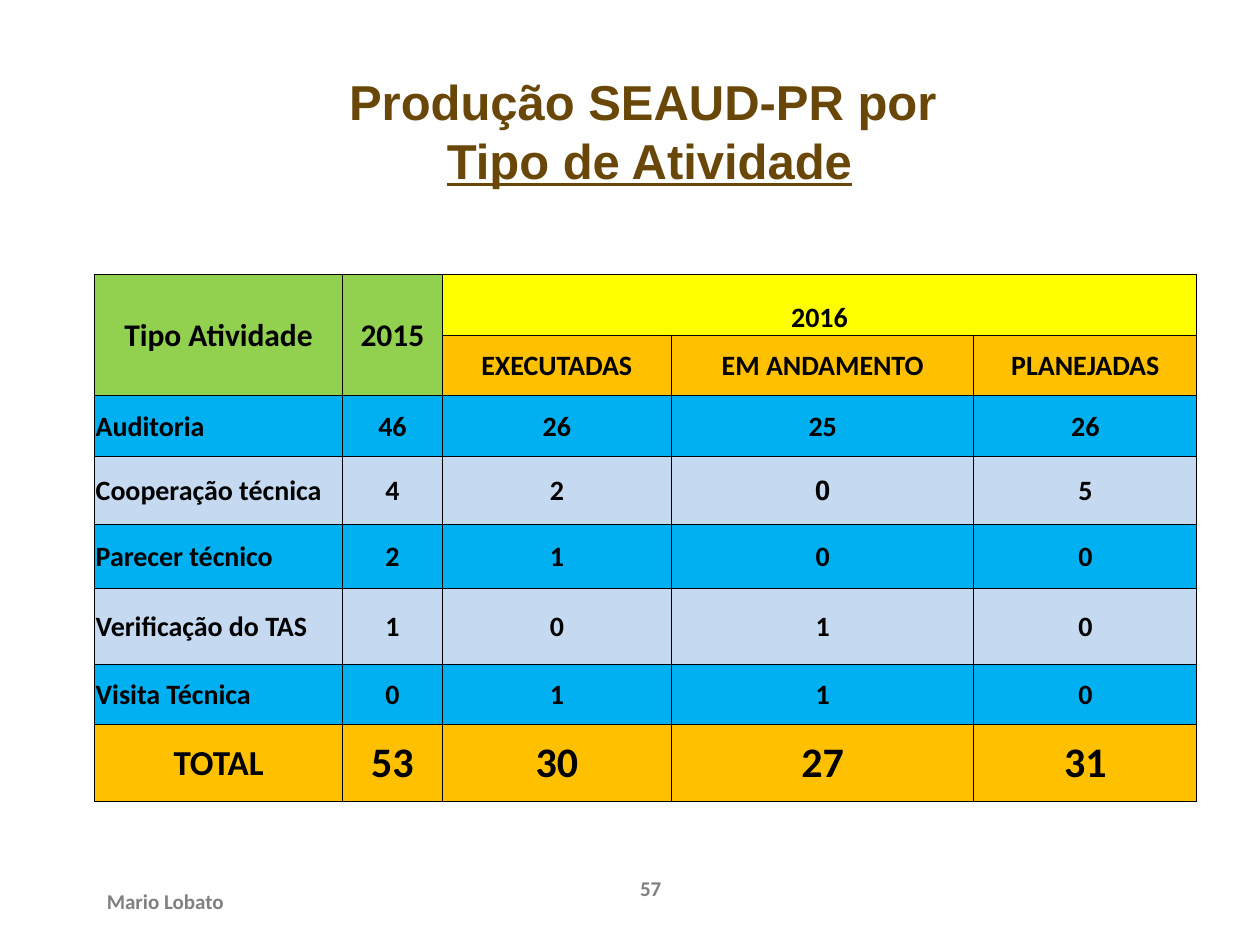
from lxml.etree import SubElement
from pptx import Presentation
from pptx.dml.color import RGBColor
from pptx.enum.text import MSO_ANCHOR as Anchor, PP_ALIGN as Align
from pptx.oxml.ns import qn
from pptx.util import Inches, Pt

COLORS = {"title": "694708", "footer": "808080", "text": "000000", "border": "000000",
          "green": "92D050", "yellow": "FFFF00", "amber": "FFC000",
          "blue": "00B0F0", "pale": "C5D9F1"}
COLUMNS, ROWS = 100, 75  # slide grid


class Deck:
    body_font, title_font = "Calibri", "Arial"

    def __init__(self, width=10, height=7.5):
        self.prs = Presentation()
        self.prs.slide_width, self.prs.slide_height = Inches(width), Inches(height)
        self.slide = self.prs.slides.add_slide(self.prs.slide_layouts[6])

    def x(self, columns):
        return round(self.prs.slide_width * columns / COLUMNS)

    def y(self, rows):
        return round(self.prs.slide_height * rows / ROWS)

    def box(self, left, top, width, height):
        return self.x(left), self.y(top), self.x(width), self.y(height)

    def style(self, paragraph, size, color, font=None, align=Align.CENTER):
        paragraph.alignment = align
        paragraph.font.name = font or self.body_font
        paragraph.font.size, paragraph.font.bold = Pt(size), True
        paragraph.font.color.rgb = RGBColor.from_string(COLORS[color])

    def text(self, place, lines, size, color, font=None, align=Align.CENTER,
             anchor=Anchor.TOP):
        frame = self.slide.shapes.add_textbox(*self.box(*place)).text_frame
        frame.word_wrap, frame.vertical_anchor = True, anchor
        frame.text = "\n".join(lines)
        for paragraph in frame.paragraphs:
            self.style(paragraph, size, color, font, align)
        return frame

    def table(self, left, top, widths, heights):
        place = self.box(left, top, sum(widths), sum(heights))
        table = self.slide.shapes.add_table(len(heights), len(widths), *place).table
        table.first_row = table.horz_banding = False
        for column, width in zip(table.columns, widths):
            column.width = self.x(width)
        for row, height in zip(table.rows, heights):
            row.height = self.y(height)
        return table

    def cell(self, cell, content, fill, size=16, align=Align.CENTER, anchor=Anchor.MIDDLE):
        cell.margin_left = cell.margin_right = cell.margin_top = Inches(0.01)
        cell.margin_bottom = 0
        cell.vertical_anchor = anchor
        self.borders(cell)
        cell.fill.solid()
        cell.fill.fore_color.rgb = RGBColor.from_string(COLORS[fill])
        cell.text = content
        self.style(cell.text_frame.paragraphs[0], size, "text", align=align)

    def borders(self, cell):
        properties = cell._tc.get_or_add_tcPr()
        for side in ("a:lnL", "a:lnR", "a:lnT", "a:lnB"):
            line = SubElement(properties, qn(side), w=str(Pt(0.5)))
            SubElement(SubElement(line, qn("a:solidFill")), qn("a:srgbClr"),
                       val=COLORS["border"])


def main():
    deck = Deck()

    # Footer
    deck.text((7.5, 69.5, 30, 4), ["Mario Lobato"], 12, "footer",
              align=Align.LEFT, anchor=Anchor.MIDDLE)
    page = deck.text((48.3, 69.5, 6.7, 4), ["57"], 12, "footer")
    page.margin_top = page.margin_bottom = 0

    # Activity table
    activities = deck.table(7.5, 21.8, [19.7, 7.9, 18.2, 24, 17.7],
                            [4.8, 4.8, 4.8, 5.4, 5.1, 6, 4.8, 6.1])

    # Two-level header
    header = [["Tipo Atividade", "2015", "2016", "", ""],
              ["", "", "EXECUTADAS", "EM ANDAMENTO", "PLANEJADAS"]]
    for r, (labels, year_fill) in enumerate(zip(header, ("yellow", "amber"))):
        for c, label in enumerate(labels):
            deck.cell(activities.cell(r, c), label, "green" if c < 2 else year_fill,
                      18 if c < 2 else 16,
                      anchor=Anchor.BOTTOM if year_fill == "yellow" and c > 1
                      else Anchor.MIDDLE)
    for c in range(2):
        activities.cell(0, c).merge(activities.cell(1, c))
    activities.cell(0, 2).merge(activities.cell(0, 4))

    # Counts by activity
    counts = [("Auditoria", 46, 26, 25, 26),
              ("Cooperação técnica", 4, 2, 0, 5),
              ("Parecer técnico", 2, 1, 0, 0),
              ("Verificação do TAS", 1, 0, 1, 0),
              ("Visita Técnica", 0, 1, 1, 0)]
    for r, record in enumerate(counts):
        for c, value in enumerate(record):
            deck.cell(activities.cell(r + 2, c), str(value), ("blue", "pale")[r % 2],
                      align=Align.CENTER if c else Align.LEFT)
    cooperation_ongoing = activities.cell(3, 3).text_frame.paragraphs[0]
    cooperation_ongoing.font.name = deck.title_font

    # Totals
    for c, value in enumerate(("TOTAL", 53, 30, 27, 31)):
        deck.cell(activities.cell(7, c), str(value), "amber", 24 if c else 20)

    # Title
    title = deck.text((12.2, 5.2, 78.7, 10.4),
                      ["Produção SEAUD-PR por ", "Tipo de Atividade"],
                      28, "title", deck.title_font)
    title.paragraphs[1].font.underline = True

    deck.prs.save("out.pptx")


if __name__ == "__main__":
    main()
